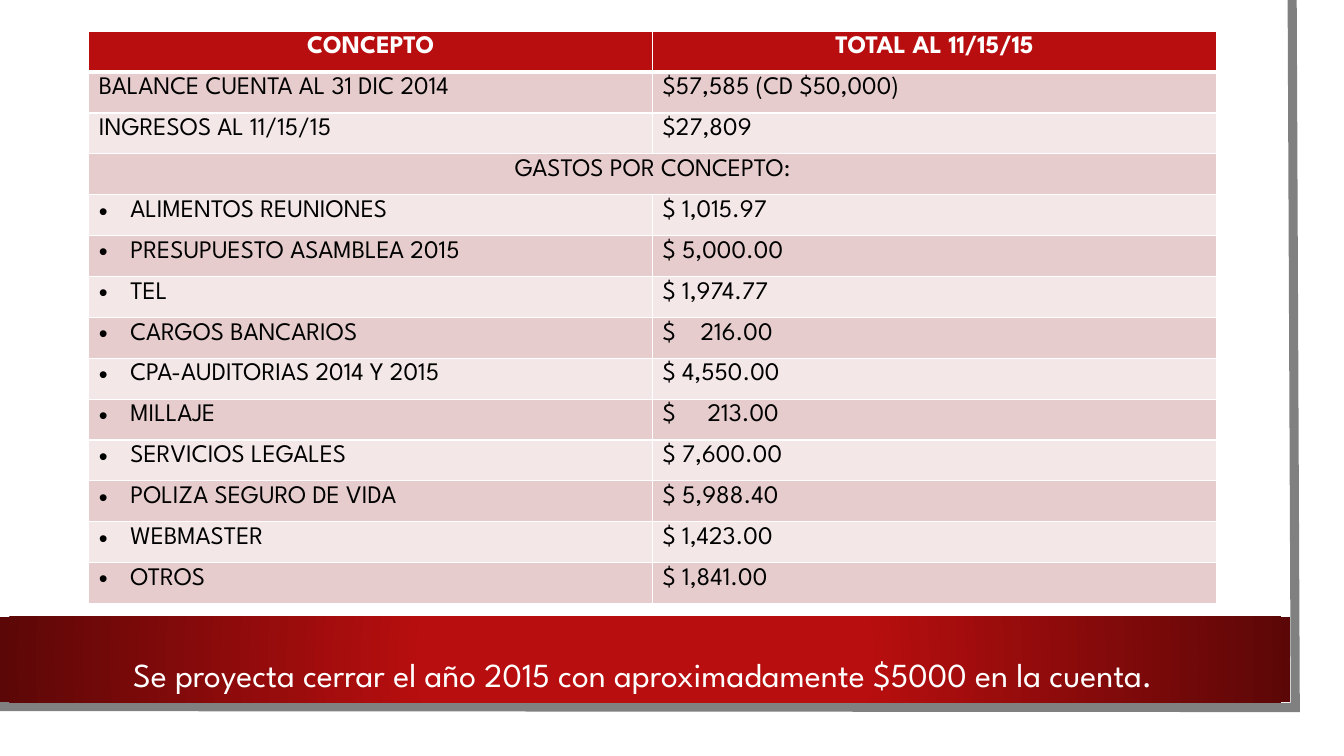
from lxml import etree
from pptx import Presentation
from pptx.dml.color import RGBColor
from pptx.enum import shapes, text
from pptx.oxml import ns
from pptx.util import Pt

RED, DARK_RED, ROSE, PALE = "B80E0F", "5C0707", "E6CCCC", "F3E7E7"
WHITE, BLACK, GREY = "FFFFFF", "000000", "808080"


def colour(hex_code):
    return RGBColor.from_string(hex_code)


def child(parent, tag, **attributes):
    return etree.SubElement(parent, ns.qn(tag), attributes)


class Report:
    """Holds the style and the current slide."""
    font = "League Spartan"

    def __init__(self, slide):
        self.slide = slide

    def style(self, paragraph, size, hex_code, bold=False, centred=False):
        align = text.PP_ALIGN
        paragraph.alignment = align.CENTER if centred else align.LEFT
        for run in paragraph.runs:
            run.font.name = self.font
            run.font.size = Pt(size)
            run.font.bold = bold
            run.font.color.rgb = colour(hex_code)

    def frame(self, points, hex_code, width):
        start, *rest = [(Pt(x), Pt(y)) for x, y in points]
        builder = self.slide.shapes.build_freeform(*start)
        builder.add_line_segments(rest, close=False)
        outline = builder.convert_to_shape()
        outline.shadow.inherit = False
        outline.fill.background()
        outline.line.color.rgb = colour(hex_code)
        outline.line.width = Pt(width)
        child(outline.line._get_or_add_ln(), "a:miter", lim="800000")

    def band(self, left, top, width, height, stops):
        band = self.slide.shapes.add_shape(
            shapes.MSO_SHAPE.RECTANGLE, Pt(left), Pt(top), Pt(width), Pt(height))
        band.shadow.inherit = False
        band.line.fill.background()
        band.fill.gradient()
        for stop, (position, hex_code) in zip(band.fill.gradient_stops, stops):
            stop.position = position
            stop.color.rgb = colour(hex_code)
        # Radial from the centre
        gradient = band.element.spPr.find(ns.qn("a:gradFill"))
        gradient.remove(gradient.find(ns.qn("a:lin")))
        radial = child(gradient, "a:path", path="circle")
        child(radial, "a:fillToRect", l="50000", t="50000", r="50000", b="50000")

    def title(self, wording, left, top, width, height):
        title = self.slide.shapes.title
        title.left, title.top = Pt(left), Pt(top)
        title.width, title.height = Pt(width), Pt(height)
        frame = title.text_frame
        frame.text = wording
        frame.word_wrap = True
        frame.auto_size = text.MSO_AUTO_SIZE.NONE
        frame.vertical_anchor = text.MSO_ANCHOR.TOP
        self.style(frame.paragraphs[0], 24, WHITE, centred=True)
        # In front of the band
        title.element.getparent().append(title.element)

    def table(self, rows, columns, left, top, width, height):
        table = self.slide.shapes.add_table(
            rows, columns, Pt(left), Pt(top), Pt(width), Pt(height)).table
        for row in table.rows:
            row.height = Pt(height / rows)
        return table

    def borders(self, cell, top, bottom):
        properties = cell._tc.get_or_add_tcPr()
        for side, width in (("L", 1), ("R", 1), ("T", top), ("B", bottom)):
            line = child(properties, f"a:ln{side}", w=str(Pt(width)))
            child(child(line, "a:solidFill"), "a:srgbClr", val=WHITE)

    def cell(self, cell, wording, fill, hex_code=BLACK, bold=False,
             centred=False, bullet=False, tab=None, top=1, bottom=1):
        self.borders(cell, top, bottom)
        cell.fill.solid()
        cell.fill.fore_color.rgb = colour(fill)
        paragraph = cell.text_frame.paragraphs[0]
        paragraph.text = wording
        properties = paragraph._p.get_or_add_pPr()
        if bullet:
            properties.set("marL", str(Pt(22.5)))
            properties.set("indent", str(-Pt(22.5)))
            child(properties, "a:buFont", typeface="Arial")
            child(properties, "a:buChar", char="•")
        if tab:
            child(child(properties, "a:tabLst"), "a:tab", pos=str(Pt(tab)), algn="l")
        self.style(paragraph, 18, hex_code, bold, centred)


HEADINGS = ("CONCEPTO", "TOTAL AL 11/15/15")
BALANCES = [("BALANCE CUENTA AL 31 DIC 2014", "$57,585 (CD $50,000)"),
            ("INGRESOS AL 11/15/15", "$27,809")]
EXPENSES_HEADING = "GASTOS POR CONCEPTO:"
EXPENSES = [("ALIMENTOS REUNIONES", "$ 1,015.97"),
            ("PRESUPUESTO ASAMBLEA 2015", "$ 5,000.00"),
            ("TEL", "$ 1,974.77"),
            ("CARGOS BANCARIOS", "$\t216.00"),
            ("CPA-AUDITORIAS 2014 Y 2015", "$ 4,550.00"),
            ("MILLAJE", "$\t213.00"),
            ("SERVICIOS LEGALES", "$ 7,600.00"),
            ("POLIZA SEGURO DE VIDA", "$ 5,988.40"),
            ("WEBMASTER", "$ 1,423.00"),
            ("OTROS", "$ 1,841.00")]
AMOUNT_TABS = {"CARGOS BANCARIOS": 27, "MILLAJE": 32}


def main():
    presentation = Presentation()
    presentation.slide_width, presentation.slide_height = Pt(960), Pt(540)
    title_only = presentation.slide_layouts[5]
    report = Report(presentation.slides.add_slide(title_only))

    # Frame and band
    report.frame([(923, 0), (925.2, 505.4), (-2.2, 504.7)], GREY, 6.5)
    report.band(0, 440.6, 921.6, 61.2, [(0.34, RED), (1, DARK_RED)])

    # Accounts table
    entries = [*BALANCES, (EXPENSES_HEADING, ""), *EXPENSES]
    accounts = report.table(len(entries) + 1, 2, 63.4, 22.3, 805.6, 409)
    for column, heading in enumerate(HEADINGS):
        report.cell(accounts.cell(0, column), heading, RED, WHITE,
                    bold=True, centred=True, bottom=3)
    for row, (concept, amount) in enumerate(entries, start=1):
        fill = ROSE if row % 2 else PALE
        top = 3 if row == 1 else 1
        report.cell(accounts.cell(row, 0), concept, fill, top=top,
                    centred=concept == EXPENSES_HEADING,
                    bullet=(concept, amount) in EXPENSES)
        report.cell(accounts.cell(row, 1), amount, fill, top=top,
                    tab=AMOUNT_TABS.get(concept))
    heading_row = len(BALANCES) + 1
    accounts.cell(heading_row, 0).merge(accounts.cell(heading_row, 1))

    # Projection
    report.title("Se proyecta cerrar el año 2015 con aproximadamente $5000 en la cuenta.",
                 18, 463.7, 882.7, 36)

    presentation.save("out.pptx")


if __name__ == "__main__":
    main()
